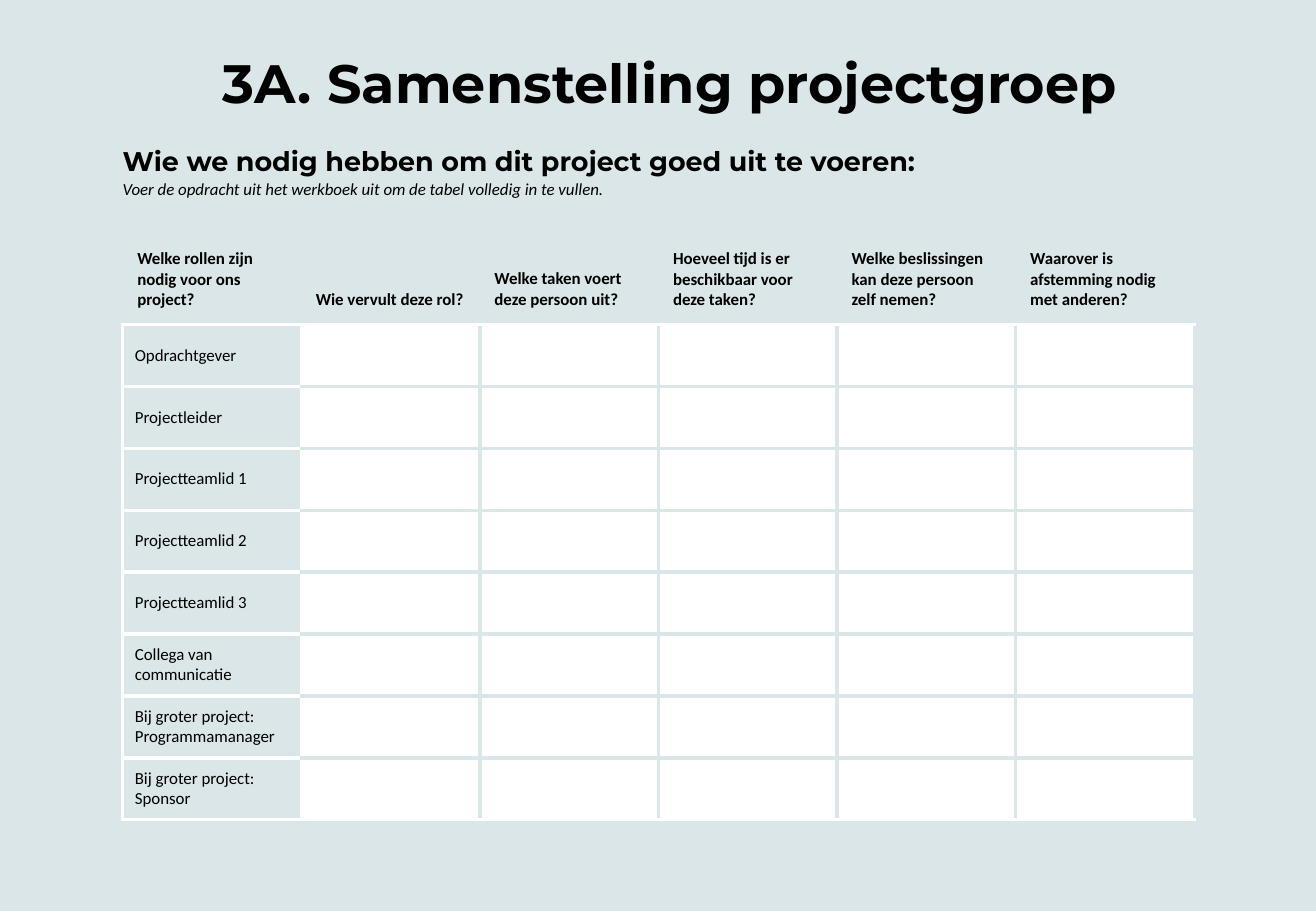
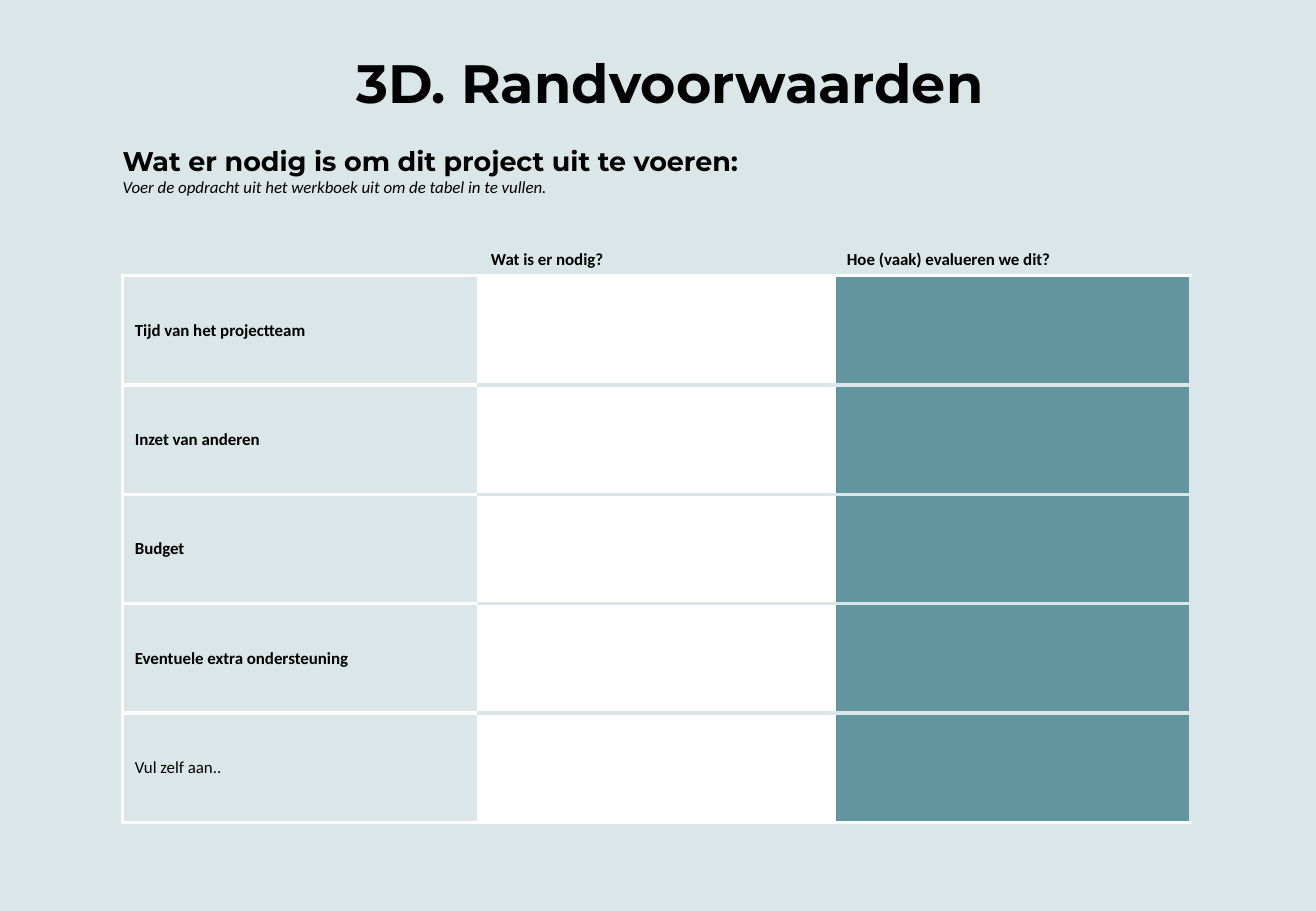
from lxml import etree
from pptx import Presentation
from pptx.dml.color import RGBColor
from pptx.enum.text import MSO_ANCHOR, MSO_AUTO_SIZE, PP_ALIGN
from pptx.oxml.ns import qn
from pptx.util import Inches, Pt

PALE = RGBColor(0xDA, 0xE6, 0xE7)
WHITE = RGBColor(0xFF, 0xFF, 0xFF)
TEAL = RGBColor(0x62, 0x96, 0x9E)
BLACK = RGBColor(0x00, 0x00, 0x00)
HEADING_FONT = "Montserrat"
BODY_FONT = "Calibri"
CENTER = PP_ALIGN.CENTER
BOTTOM = MSO_ANCHOR.BOTTOM
MIDDLE = MSO_ANCHOR.MIDDLE
FIT_SHAPE = MSO_AUTO_SIZE.SHAPE_TO_FIT_TEXT
LEFT = 1.01

PAGES = [
    {
        "title": "3A. Samenstelling projectgroep",
        "subtitle": "Wie we nodig hebben om dit project goed uit te voeren:",
        "hint": "Voer de opdracht uit het werkboek uit om de tabel volledig in te vullen.",
        "hint_gap": 1.2,
        "headers": [
            "Welke rollen zijn nodig voor ons project?",
            "Wie vervult deze rol?",
            "Welke taken voert deze persoon uit?",
            "Hoeveel tijd is er beschikbaar voor deze taken?",
            "Welke beslissingen kan deze persoon zelf nemen?",
            "Waarover is afstemming nodig met anderen?",
        ],
        "labels": [
            "Opdrachtgever",
            "Projectleider",
            "Projectteamlid 1",
            "Projectteamlid 2",
            "Projectteamlid 3",
            "Collega van communicatie",
            "Bij groter project: Programmamanager",
            "Bij groter project:\vSponsor",
        ],
        "bold_labels": 0,
        "top": 1.93,
        "column_width": 1.47,
        "header_height": 0.74,
        "row_height": 0.51,
        "header_margins": (0.12, 0.12),
        "fills": [None] + [WHITE] * 5,
        "verticals": [WHITE] * 2 + [PALE] * 5,
    },
    {
        "title": "3D. Randvoorwaarden",
        "subtitle": "Wat er nodig is om dit project uit te voeren:",
        "hint": "Voer de opdracht uit het werkboek uit om de tabel in te vullen.",
        "hint_gap": 0,
        "headers": ["", "Wat is er nodig?", "Hoe (vaak) evalueren we dit?"],
        "labels": [
            "Tijd van het projectteam",
            "Inzet van anderen",
            "Budget",
            "Eventuele extra ondersteuning",
            "Vul zelf aan..",
        ],
        "bold_labels": 4,
        "top": 1.91,
        "column_width": 2.93,
        "header_height": 0.36,
        "row_height": 0.9,
        "header_margins": (0.1, 0.05),
        "fills": [None, WHITE, TEAL],
        "verticals": [WHITE] * 3 + [PALE],
    },
]


def write(para, text, font_name, size, bold=False, italic=False):
    para.text = text
    for span in para.runs:
        font = span.font
        font.name = font_name
        font.size = Pt(size)
        font.bold = bold
        font.italic = italic
        font.color.rgb = BLACK


def add_border(cell, side, color, width):
    properties = cell._tc.get_or_add_tcPr()
    line = etree.SubElement(properties, qn(f"a:ln{side}"), w=str(Pt(width)))
    fill = etree.SubElement(line, qn("a:solidFill"))
    etree.SubElement(fill, qn("a:srgbClr"), val=str(color))


deck = Presentation()
deck.slide_width = Inches(10.83)
deck.slide_height = Inches(7.5)
backdrop = deck.slide_master.background.fill
backdrop.solid()
backdrop.fore_color.rgb = PALE

for content in PAGES:
    page = deck.slides.add_slide(deck.slide_layouts[6])

    title_box = page.shapes.add_textbox(Inches(0.41), Inches(0.41), Inches(10.21), Inches(0.53))
    intro_box = page.shapes.add_textbox(Inches(LEFT), Inches(1.19), Inches(8.82), Inches(0.45))
    for box in (title_box, intro_box):
        frame = box.text_frame
        frame.word_wrap = True
        frame.auto_size = FIT_SHAPE
        frame.margin_left = frame.margin_right = frame.margin_top = frame.margin_bottom = 0

    title = title_box.text_frame.paragraphs[0]
    title.alignment = CENTER
    write(title, content["title"], HEADING_FONT, 32, bold=True)

    subtitle = intro_box.text_frame.paragraphs[0]
    subtitle.space_after = Pt(content["hint_gap"])
    write(subtitle, content["subtitle"], HEADING_FONT, 16, bold=True)
    hint = intro_box.text_frame.add_paragraph()
    write(hint, content["hint"], BODY_FONT, 10, italic=True)

    headers = content["headers"]
    labels = content["labels"]
    column_count = len(headers)
    last_row = len(labels)
    heights = [content["header_height"]] + [content["row_height"]] * last_row
    table = page.shapes.add_table(
        last_row + 1, column_count, Inches(LEFT), Inches(content["top"]),
        Inches(content["column_width"] * column_count), Inches(sum(heights)),
    ).table
    table.first_row = False
    table.horz_banding = False
    for column in table.columns:
        column.width = Inches(content["column_width"])

    for row_index, height in enumerate(heights):
        table.rows[row_index].height = Inches(height)
        is_header = row_index == 0
        for column_index in range(column_count):
            cell = table.cell(row_index, column_index)
            if is_header:
                text, bold = headers[column_index], True
                side_margin, end_margin = content["header_margins"]
                left = right = top = PALE
                bottom = WHITE
            else:
                text = labels[row_index - 1] if column_index == 0 else ""
                bold = row_index <= content["bold_labels"]
                side_margin, end_margin = 0.1, 0.05
                left, right = content["verticals"][column_index:column_index + 2]
                top = WHITE if column_index == 0 or row_index == 1 else PALE
                bottom = WHITE if column_index == 0 or row_index == last_row else PALE

            cell.vertical_anchor = BOTTOM if is_header else MIDDLE
            cell.margin_left = cell.margin_right = Inches(side_margin)
            cell.margin_top = cell.margin_bottom = Inches(end_margin if text else 0)
            if text:
                write(cell.text_frame.paragraphs[0], text, BODY_FONT, 10, bold=bold)

            add_border(cell, "L", left, 2.21)
            add_border(cell, "R", right, 2.21)
            add_border(cell, "T", top, 2.25 if row_index == 1 else 2.21)
            add_border(cell, "B", bottom, 2.25 if is_header else 2.21)

            fill_color = None if is_header else content["fills"][column_index]
            if fill_color is None:
                cell.fill.background()
            else:
                cell.fill.solid()
                cell.fill.fore_color.rgb = fill_color

deck.save("out.pptx")
